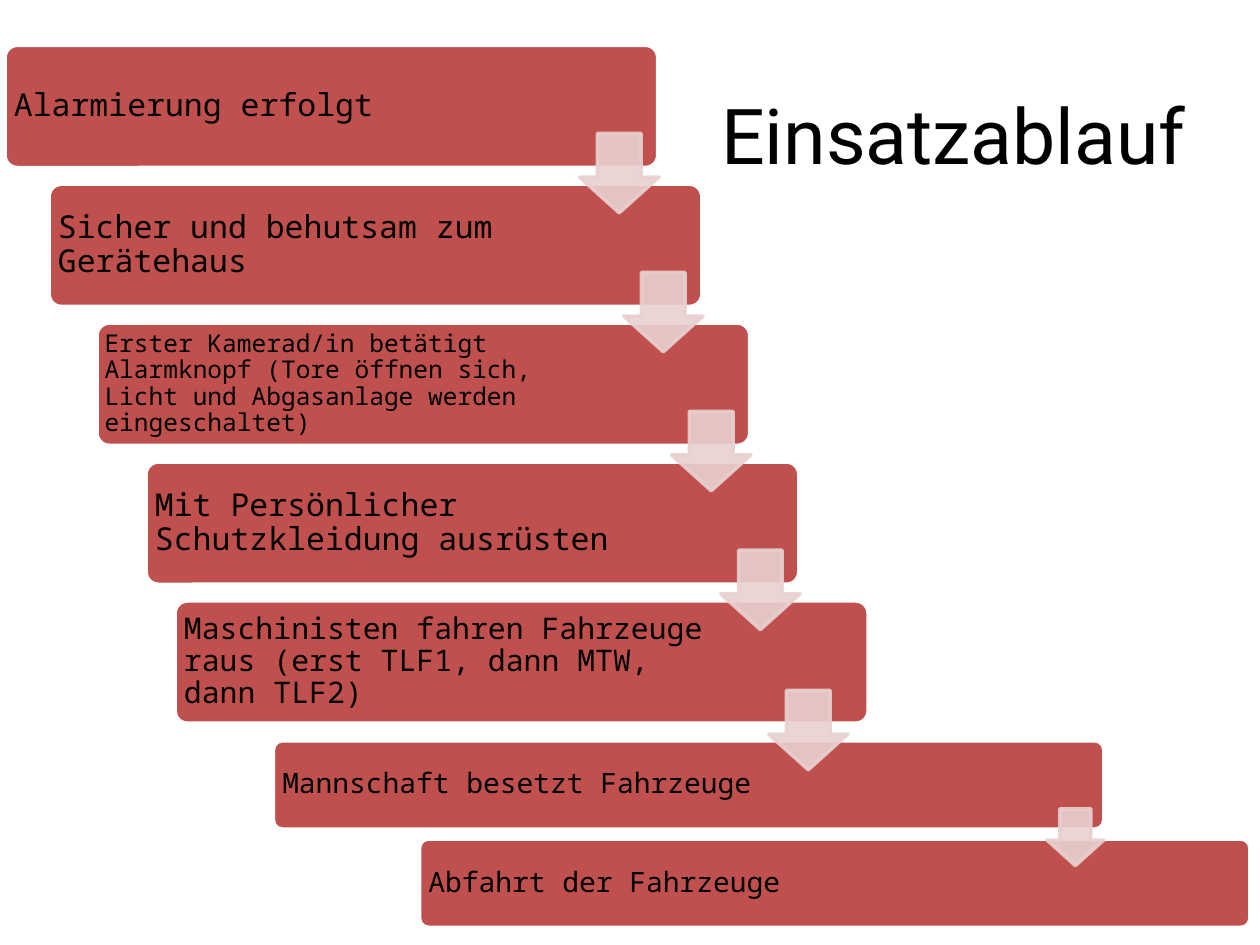
from dataclasses import dataclass

from lxml import etree
from pptx import Presentation
from pptx.dml.color import RGBColor
from pptx.enum.shapes import MSO_SHAPE
from pptx.enum.text import MSO_ANCHOR, PP_ALIGN
from pptx.oxml.ns import qn
from pptx.util import Inches, Pt

ROUNDED = MSO_SHAPE.ROUNDED_RECTANGLE
DOWN_ARROW = MSO_SHAPE.DOWN_ARROW
MIDDLE = MSO_ANCHOR.MIDDLE
LEFT, CENTER = PP_ALIGN.LEFT, PP_ALIGN.CENTER
TITLE_ONLY = 5


@dataclass(frozen=True)
class Theme:
    step: str = "C0504D"
    edge: str = "FFFFFF"
    arrow: str = "E8D0D0"
    ink: str = "000000"
    arrow_opacity: int = 90
    title_font: str = "Roboto"
    step_font: str = "Noto Sans Mono"
    title_size: int = 44
    large: int = 18
    medium: int = 17
    small: int = 16
    tiny: int = 14
    line_width: int = 2


@dataclass(frozen=True)
class Box:
    left: float
    top: float
    width: float
    height: float

    def inside(self, left, top, width, height):
        return Box(self.left + left, self.top + top, width, height)

    def lengths(self):
        return [Inches(n) for n in (self.left, self.top, self.width, self.height)]


@dataclass(frozen=True)
class Step:
    text: str
    indent: float
    text_width: float
    size: int
    width: float
    inset: float = 0.07


THEME = Theme()

ALARM_STEPS = [
    Step("Alarmierung erfolgt", 0, 4.08, THEME.large, 5.18),
    Step("Sicher und behutsam zum Gerätehaus", 0.35, 4.17, THEME.large, 5.18),
    Step("Erster Kamerad/in betätigt Alarmknopf (Tore öffnen sich, "
         "Licht und Abgasanlage werden eingeschaltet)",
         0.73, 4.17, THEME.tiny, 5.18, 0.06),
    Step("Mit Persönlicher Schutzkleidung ausrüsten", 1.12, 4.17, THEME.large, 5.18),
    Step("Maschinisten fahren Fahrzeuge raus (erst TLF1, dann MTW, dann TLF2)",
         1.35, 4.42, THEME.medium, 5.5),
]
DEPARTURE_STEPS = [
    Step("Mannschaft besetzt Fahrzeuge", 0, 5.91, THEME.small, 6.59),
    Step("Abfahrt der Fahrzeuge", 1.16, 4.98, THEME.small, 6.59),
]


def write_text(shape, text, *, size, font, align=LEFT, inset=None, spacing=None):
    frame = shape.text_frame
    frame.word_wrap = True
    frame.vertical_anchor = MIDDLE
    if inset is not None:
        frame.margin_left = frame.margin_right = Inches(inset)
        frame.margin_top = frame.margin_bottom = Inches(inset)
    para = frame.paragraphs[0]
    para.alignment = align
    if spacing is not None:
        para.line_spacing = spacing
    span = para.add_run()
    span.text = text
    span.font.size = Pt(size)
    span.font.name = font
    span.font.color.rgb = RGBColor.from_string(THEME.ink)


def add_figure(shapes, preset, box, *, fill, line, adjustments):
    figure = shapes.add_shape(preset, *box.lengths())
    figure.shadow.inherit = False
    figure.fill.solid()
    figure.fill.fore_color.rgb = RGBColor.from_string(fill)
    figure.line.color.rgb = RGBColor.from_string(line)
    figure.line.width = Pt(THEME.line_width)
    for index, value in enumerate(adjustments):
        figure.adjustments[index] = value
    return figure


def add_arrow(shapes, box):
    arrow = add_figure(shapes, DOWN_ARROW, box, fill=THEME.arrow,
                       line=THEME.arrow, adjustments=[0.55, 0.45])
    for color in arrow.element.spPr.iter(qn("a:srgbClr")):
        alpha = etree.SubElement(color, qn("a:alpha"))
        alpha.set("val", str(THEME.arrow_opacity * 1000))


def add_step(shapes, box, step):
    add_figure(shapes, ROUNDED, box, fill=THEME.step, line=THEME.edge,
               adjustments=[0.1])
    label = shapes.add_textbox(*box.inside(0, 0, step.text_width, box.height).lengths())
    write_text(label, step.text, size=step.size, font=THEME.step_font,
               inset=step.inset, spacing=0.9)


def add_staircase(page, box, steps, *, step_height, arrow_left, arrow_top, arrow_size):
    shapes = page.shapes.add_group_shape().shapes
    pitch = (box.height - step_height) / (len(steps) - 1)
    for row, step in enumerate(steps):
        add_step(shapes, box.inside(step.indent, row * pitch, step.width, step_height), step)
    for row, step in enumerate(steps[:-1]):
        add_arrow(shapes, box.inside(step.indent + arrow_left, row * pitch + arrow_top,
                                     arrow_size, arrow_size))


def add_title(page, box):
    title = page.shapes.title
    title.left, title.top, title.width, title.height = box.lengths()
    write_text(title, "Einsatzablauf", size=THEME.title_size,
               font=THEME.title_font, align=CENTER)


def main():
    deck = Presentation()
    deck.slide_width, deck.slide_height = Inches(10), Inches(7.5)
    page = deck.slides.add_slide(deck.slide_layouts[TITLE_ONLY])
    add_title(page, Box(2.4, 0.05, 10.34, 2.02))
    add_staircase(page, Box(0.04, 0.36, 6.85, 5.38), ALARM_STEPS, step_height=0.97,
                  arrow_left=4.56, arrow_top=0.7, arrow_size=0.63)
    add_staircase(page, Box(2.17, 5.88, 7.75, 1.48), DEPARTURE_STEPS, step_height=0.7,
                  arrow_left=6.14, arrow_top=0.54, arrow_size=0.45)
    add_arrow(page.shapes, Box(6.1, 5.48, 0.63, 0.63))
    deck.save("out.pptx")


if __name__ == "__main__":
    main()
